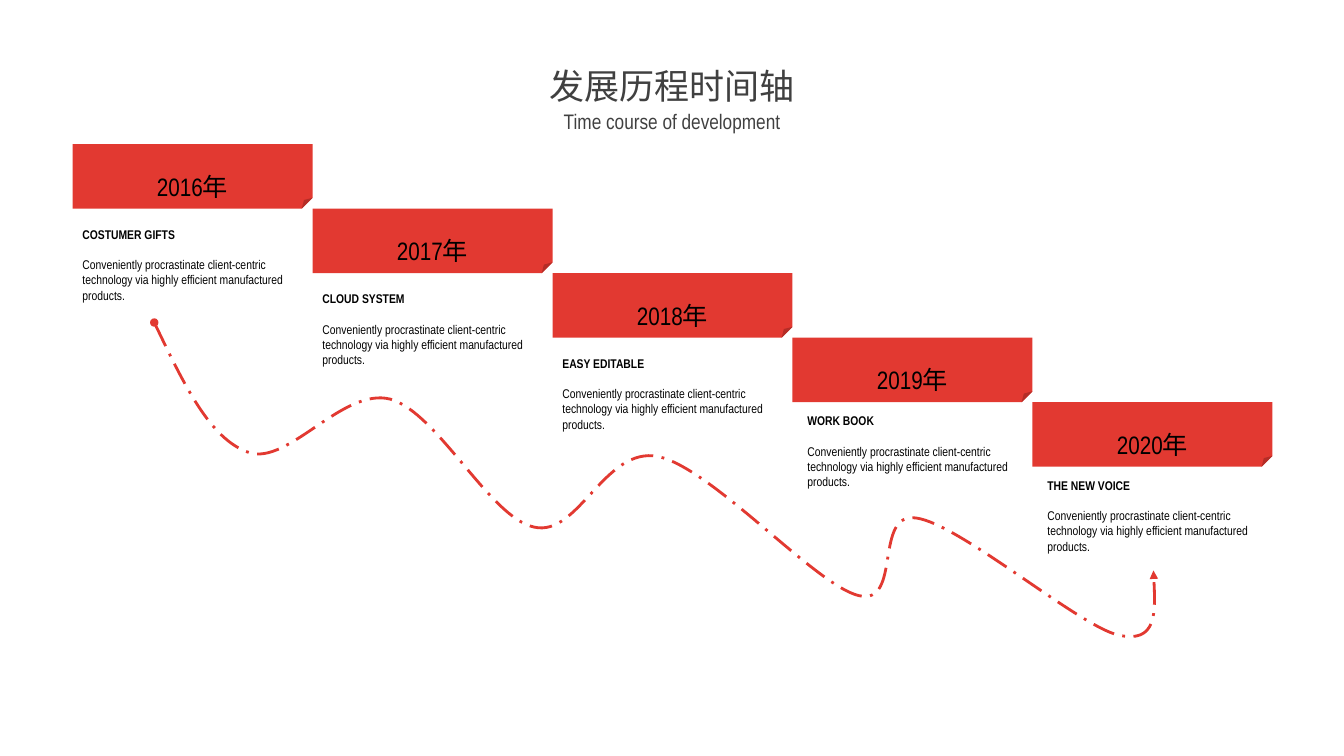
from lxml.etree import SubElement
from pptx import Presentation
from pptx.dml.color import RGBColor
from pptx.enum.dml import MSO_LINE
from pptx.enum.shapes import MSO_SHAPE
from pptx.enum.text import MSO_ANCHOR, MSO_AUTO_SIZE, PP_ALIGN
from pptx.oxml.ns import qn
from pptx.util import Inches, Pt

TITLE = "发展历程时间轴"
SUBTITLE = "Time course of development"
DETAIL = "Conveniently procrastinate client-centric technology via highly efficient manufactured products."
NEAR, SHIFTED = (0, 0.13), (0.05, 0.06)
STAGES = [
    ("2016年", "COSTUMER GIFTS", NEAR),
    ("2017年", "CLOUD SYSTEM", NEAR),
    ("2018年", "EASY EDITABLE", NEAR),
    ("2019年", "WORK BOOK", SHIFTED),
    ("2020年", "THE NEW VOICE", SHIFTED),
]
TRAIL_START = (1.53, 3.2)
TRAIL_CURVES = [
    [(1.81, 3.78), (2.08, 4.36), (2.47, 4.49)],
    [(2.86, 4.62), (3.4, 3.84), (3.87, 3.96)],
    [(4.34, 4.09), (4.86, 5.14), (5.3, 5.23)],
    [(5.74, 5.33), (6, 4.42), (6.53, 4.53)],
    [(7.07, 4.65), (8.09, 5.81), (8.52, 5.91)],
    [(8.95, 6.01), (8.66, 5.07), (9.09, 5.14)],
    [(9.52, 5.2), (10.7, 6.21), (11.09, 6.3)],
    [(11.48, 6.39), (11.46, 6.03), (11.44, 5.66)],
]
FONT, RED, BLACK, GREY = "Arial Narrow", "E23931", "000000", "404040"
WIDTH, HEIGHT = 13.33, 7.5
CARD_LEFT, CARD_TOP, CARD_WIDTH, CARD_HEIGHT = 0.72, 1.43, 2.38, 0.64
NOTE_WIDTH, NOTE_HEIGHT = 2.33, 0.71


def color(value):
    return RGBColor.from_string(value)


def style(paragraph, size, value, bold=False, align=PP_ALIGN.LEFT):
    paragraph.alignment = align
    font = paragraph.font
    font.name, font.size, font.bold = FONT, Pt(size), bold
    font.color.rgb = color(value)


def place(shape, left, top, width, height):
    shape.left, shape.top = Inches(left), Inches(top)
    shape.width, shape.height = Inches(width), Inches(height)


def add_heading(shape, text, size, top, width, height):
    place(shape, (WIDTH - width) / 2, top, width, height)
    frame = shape.text_frame
    frame.word_wrap, frame.auto_size = True, MSO_AUTO_SIZE.SHAPE_TO_FIT_TEXT
    frame.vertical_anchor = MSO_ANCHOR.TOP
    frame.text = text
    frame.paragraphs[0].line_spacing = 1.0
    frame.paragraphs[0].space_before = Pt(0)
    style(frame.paragraphs[0], size, GREY, align=PP_ALIGN.CENTER)


def add_card(shapes, left, top, year):
    card = shapes.add_shape(MSO_SHAPE.FOLDED_CORNER, Inches(left), Inches(top),
                            Inches(CARD_WIDTH), Inches(CARD_HEIGHT))
    card.shadow.inherit = False
    card.fill.solid()
    card.fill.fore_color.rgb = color(RED)
    card.line.fill.background()
    frame = card.text_frame
    frame.vertical_anchor = MSO_ANCHOR.MIDDLE
    frame.text = year
    frame.paragraphs[0].line_spacing = 2.0
    style(frame.paragraphs[0], 18, BLACK, align=PP_ALIGN.CENTER)


def add_note(shapes, left, top, heading):
    note = shapes.add_textbox(Inches(left), Inches(top), Inches(NOTE_WIDTH), Inches(NOTE_HEIGHT))
    frame = note.text_frame
    frame.word_wrap, frame.auto_size = True, MSO_AUTO_SIZE.SHAPE_TO_FIT_TEXT
    frame.text = heading
    style(frame.paragraphs[0], 9, BLACK, bold=True)
    detail = frame.add_paragraph()
    detail.text = DETAIL
    detail.space_before = Pt(10.9)
    style(detail, 9, BLACK)


def add_trail(shapes):
    builder = shapes.build_freeform(*map(Inches, TRAIL_START))
    builder.add_line_segments([tuple(map(Inches, curve[-1])) for curve in TRAIL_CURVES], close=False)
    trail = builder.convert_to_shape()
    trail.shadow.inherit = False
    trail.fill.background()
    trail.line.color.rgb = color(RED)
    trail.line.width = Pt(2)
    trail.line.dash_style = MSO_LINE.LONG_DASH_DOT
    segments = list(trail.element.iter(qn("a:lnTo")))
    for segment, curve in zip(segments, TRAIL_CURVES):
        segment.tag = qn("a:cubicBezTo")
        segment.remove(segment[0])
        for x, y in curve:
            SubElement(segment, qn("a:pt"), x=str(Inches(x) - trail.left), y=str(Inches(y) - trail.top))
    outline = trail.line._get_or_add_ln()
    SubElement(outline, qn("a:headEnd"), type="oval")
    SubElement(outline, qn("a:tailEnd"), type="triangle")


def main():
    deck = Presentation()
    deck.slide_width, deck.slide_height = Inches(WIDTH), Inches(HEIGHT)
    slide = deck.slides.add_slide(deck.slide_layouts[5])
    shapes = slide.shapes
    add_heading(shapes.title, TITLE, 25, 0.59, 3.36, 0.52)
    add_heading(shapes.add_textbox(0, 0, 0, 0), SUBTITLE, 15, 1.03, 4.41, 0.35)
    for step, (year, heading, (shift, gap)) in enumerate(STAGES):
        left = CARD_LEFT + step * CARD_WIDTH
        top = CARD_TOP + step * CARD_HEIGHT
        add_card(shapes, left, top, year)
        add_note(shapes, left + shift, top + CARD_HEIGHT + gap, heading)
    add_trail(shapes)
    deck.save("out.pptx")


if __name__ == "__main__":
    main()
